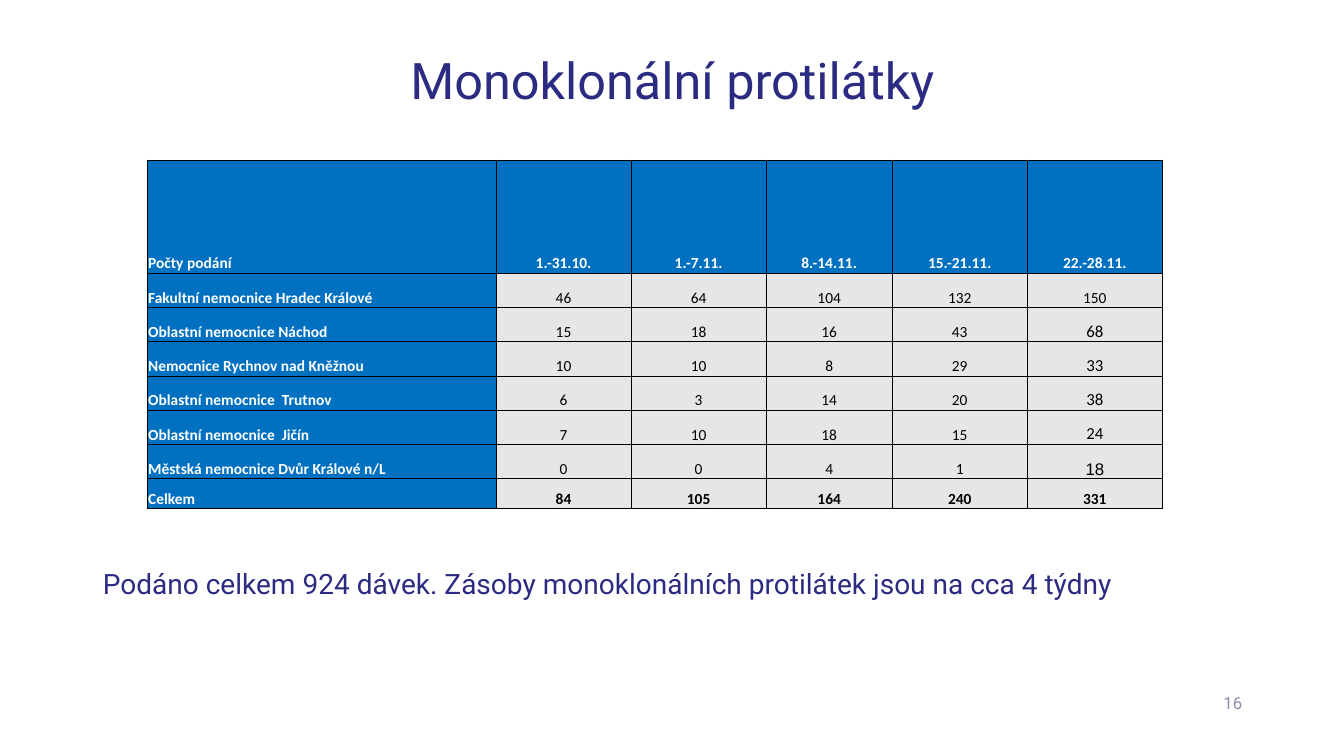
from dataclasses import dataclass

from lxml.etree import SubElement
from pptx import Presentation
from pptx.dml.color import RGBColor
from pptx.enum.text import MSO_ANCHOR, MSO_AUTO_SIZE, PP_ALIGN
from pptx.oxml.ns import qn
from pptx.util import Inches, Pt

NAVY = RGBColor(0x2B, 0x2B, 0x82)
MUTED = RGBColor(0x8F, 0x8F, 0xAD)
BLUE = RGBColor(0x00, 0x70, 0xC0)
GREY = RGBColor(0xE6, 0xE6, 0xE6)
WHITE = RGBColor(0xFF, 0xFF, 0xFF)
BLACK = RGBColor(0x00, 0x00, 0x00)


@dataclass
class TextBlock:
    text: str
    at: tuple
    size: int
    color: RGBColor
    align: PP_ALIGN
    anchor: MSO_ANCHOR
    spacing: float = 0.9


@dataclass
class TableRow:
    label: str
    values: tuple
    height: float = 0.34
    last_size: int = 11
    last_font: str = "Calibri"


TITLE = TextBlock("Monoklonální protilátky", (0.92, 0.41, 11.5, 0.74), 36, NAVY,
                  PP_ALIGN.CENTER, MSO_ANCHOR.BOTTOM)
SUMMARY = TextBlock("Podáno celkem 924 dávek. Zásoby monoklonálních protilátek jsou na cca 4 týdny",
                    (0.92, 5.56, 11.5, 0.5), 20, NAVY, PP_ALIGN.JUSTIFY, MSO_ANCHOR.MIDDLE)
NUMBER = TextBlock("16", (11.28, 6.77, 1.14, 0.4), 12, MUTED,
                   PP_ALIGN.RIGHT, MSO_ANCHOR.MIDDLE, 1.0)

COLUMNS = (3.46, 1.34, 1.34, 1.25, 1.34, 1.34)
ROWS = (
    TableRow("Počty podání", ("1.-31.10.", "1.-7.11.", "8.-14.11.", "15.-21.11.", "22.-28.11."), 1.12),
    TableRow("Fakultní nemocnice Hradec Králové", (46, 64, 104, 132, 150)),
    TableRow("Oblastní nemocnice Náchod", (15, 18, 16, 43, 68), last_size=12),
    TableRow("Nemocnice Rychnov nad Kněžnou", (10, 10, 8, 29, 33), last_size=12),
    TableRow("Oblastní nemocnice  Trutnov", (6, 3, 14, 20, 38), last_size=12),
    TableRow("Oblastní nemocnice  Jičín", (7, 10, 18, 15, 24), last_size=12),
    TableRow("Městská nemocnice Dvůr Králové n/L", (0, 0, 4, 1, 18), last_size=12, last_font="Arial"),
    TableRow("Celkem", (84, 105, 164, 240, 331), 0.3),
)


def set_all(obj, values: dict) -> None:
    for name, value in values.items():
        setattr(obj, name, value)


def write_run(p, text: str, size: int, font: str, color: RGBColor, bold: bool = False) -> None:
    r = p.add_run()
    r.text = text
    set_all(r.font, {"size": Pt(size), "name": font, "bold": bold})
    r.font.color.rgb = color


def fill_text(sp, block: TextBlock) -> None:
    left, top, width, height = map(Inches, block.at)
    set_all(sp, {"left": left, "top": top, "width": width, "height": height})
    tf = sp.text_frame
    set_all(tf, {"word_wrap": True, "auto_size": MSO_AUTO_SIZE.NONE,
                 "vertical_anchor": block.anchor})
    p = tf.paragraphs[0]
    set_all(p, {"alignment": block.align, "line_spacing": block.spacing, "space_before": Pt(0)})
    write_run(p, block.text, block.size, "Roboto", block.color)


def remove_bullet(p) -> None:
    pPr = p._p.get_or_add_pPr()
    pPr.set("marL", "0")
    pPr.set("indent", "0")
    SubElement(pPr, qn("a:buNone"))


def set_borders(cell, widths: dict) -> None:
    tcPr = cell._tc.get_or_add_tcPr()
    for side, width in widths.items():
        ln = SubElement(tcPr, qn(f"a:ln{side}"), w=str(Pt(width)))
        fill = SubElement(ln, qn("a:solidFill"))
        SubElement(fill, qn("a:srgbClr"), val=str(BLACK))


def add_dose_table(s) -> None:
    height = sum(row.height for row in ROWS)
    table = s.shapes.add_table(len(ROWS), len(COLUMNS), Inches(1.46), Inches(1.59),
                               Inches(sum(COLUMNS)), Inches(height)).table
    last_row, last_col = len(ROWS) - 1, len(COLUMNS) - 1
    for column, width in zip(table.columns, COLUMNS):
        column.width = Inches(width)
    for i, row in enumerate(ROWS):
        table.rows[i].height = Inches(row.height)
        for j, value in enumerate((row.label, *row.values)):
            cell = table.cell(i, j)
            heading = i == 0 or j == 0
            set_all(cell, {"margin_left": Inches(0.01), "margin_right": Inches(0.01),
                           "margin_top": Inches(0.01), "margin_bottom": 0,
                           "vertical_anchor": MSO_ANCHOR.BOTTOM})
            set_borders(cell, {"L": 1 if j == 0 else 0.5, "R": 0.5,
                               "T": 1 if i == 0 else 0.5, "B": 1 if i == last_row else 0.5})
            cell.fill.solid()
            cell.fill.fore_color.rgb = BLUE if heading else GREY
            p = cell.text_frame.paragraphs[0]
            p.alignment = PP_ALIGN.LEFT if j == 0 else PP_ALIGN.CENTER
            size, font = (row.last_size, row.last_font) if j == last_col else (11, "Calibri")
            write_run(p, str(value), size, font, WHITE if heading else BLACK,
                      heading or i == last_row)


def main() -> None:
    prs = Presentation()
    set_all(prs, {"slide_width": Inches(13.33), "slide_height": Inches(7.5)})
    s = prs.slides.add_slide(prs.slide_layouts[1])
    fill_text(s.shapes.title, TITLE)
    body = s.placeholders[1]
    fill_text(body, SUMMARY)
    remove_bullet(body.text_frame.paragraphs[0])
    fill_text(s.shapes.add_textbox(0, 0, 0, 0), NUMBER)
    add_dose_table(s)
    prs.save("out.pptx")


if __name__ == "__main__":
    main()
